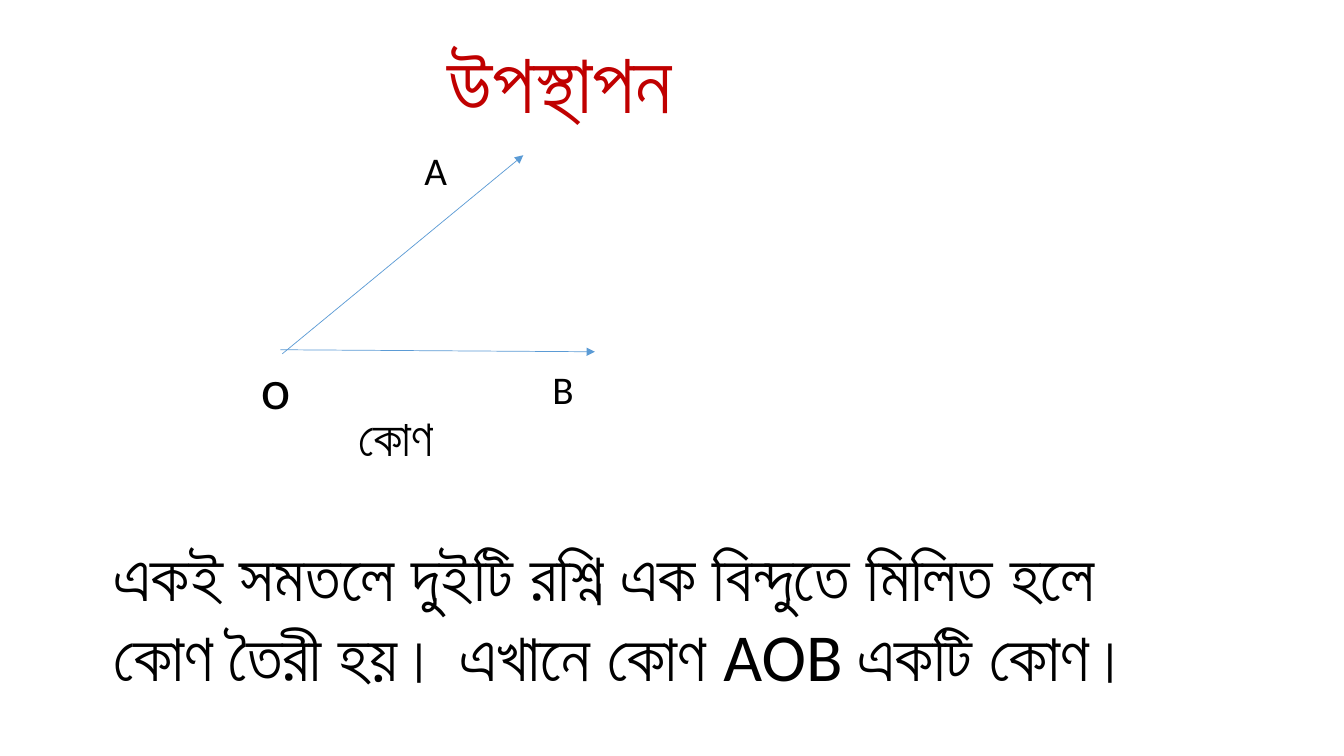
from lxml import etree
from pptx import Presentation
from pptx import util as u
from pptx.dml.color import RGBColor
from pptx.enum import shapes, text
from pptx.oxml import ns

FONT = "Calibri"
BLACK = "000000"
RED = "C00000"
BLUE = "5B9BD5"


def colour(value):
    """Turn a hex string into a colour."""
    return RGBColor.from_string(value)


def add_label(slide, box, wording, size, ink=BLACK):
    """Place one wrapped paragraph in a box of left, top, width, height."""
    label = slide.shapes.add_textbox(*(u.Inches(length) for length in box))
    frame = label.text_frame
    frame.word_wrap = True
    frame.auto_size = text.MSO_AUTO_SIZE.SHAPE_TO_FIT_TEXT
    frame.text = wording
    font = frame.paragraphs[0].runs[0].font
    font.name, font.size = FONT, u.Pt(size)
    font.color.rgb = colour(ink)


def add_ray(slide, start, end):
    """Draw a thin ray with an arrowhead at its end."""
    ray = slide.shapes.add_connector(
        shapes.MSO_CONNECTOR.STRAIGHT,
        *(u.Inches(length) for length in (*start, *end)))
    ray.line.color.rgb = colour(BLUE)
    ray.line.width = u.Pt(0.5)
    etree.SubElement(ray.line._get_or_add_ln(), ns.qn("a:tailEnd"), type="triangle")
    etree.SubElement(ray._element.spPr, ns.qn("a:effectLst"))


def add_angle(slide, left, top):
    """Draw angle AOB with its point labels and caption from a top left corner."""
    rays = [((0.29, 2.07), (3.41, 2.09)),
            ((0.31, 2.11), (2.7, 0.14))]
    labels = [("কোণ", 36, (0.97, 2.58, 1.07, 0.71)),
              ("A", 28, (1.62, 0, 0.67, 0.57)),
              ("o", 40, (0, 2.06, 0.7, 0.77)),
              ("B", 28, (2.89, 2.18, 0.69, 0.57))]
    for ray in rays:
        add_ray(slide, *((left + x, top + y) for x, y in ray))
    for wording, size, (x, y, width, height) in labels:
        add_label(slide, (left + x, top + y, width, height), wording, size)


def main():
    """Build the slide that presents the angle and save it."""
    deck = Presentation()
    deck.slide_width, deck.slide_height = u.Inches(13.33), u.Inches(7.5)
    slide = deck.slides.add_slide(deck.slide_layouts[6])
    add_label(slide, (4.34, 0.24, 2.68, 1.11), "উপস্থাপন", 60, RED)
    add_angle(slide, 2.49, 1.4)
    add_label(slide, (1.03, 5.25, 10.91, 1.72),
              "একই সমতলে দুইটি রশ্নি এক বিন্দুতে মিলিত হলে কোণ তৈরী হয়। "
              "এখানে কোণ AOB একটি কোণ।", 48)
    deck.save("out.pptx")


if __name__ == "__main__":
    main()
